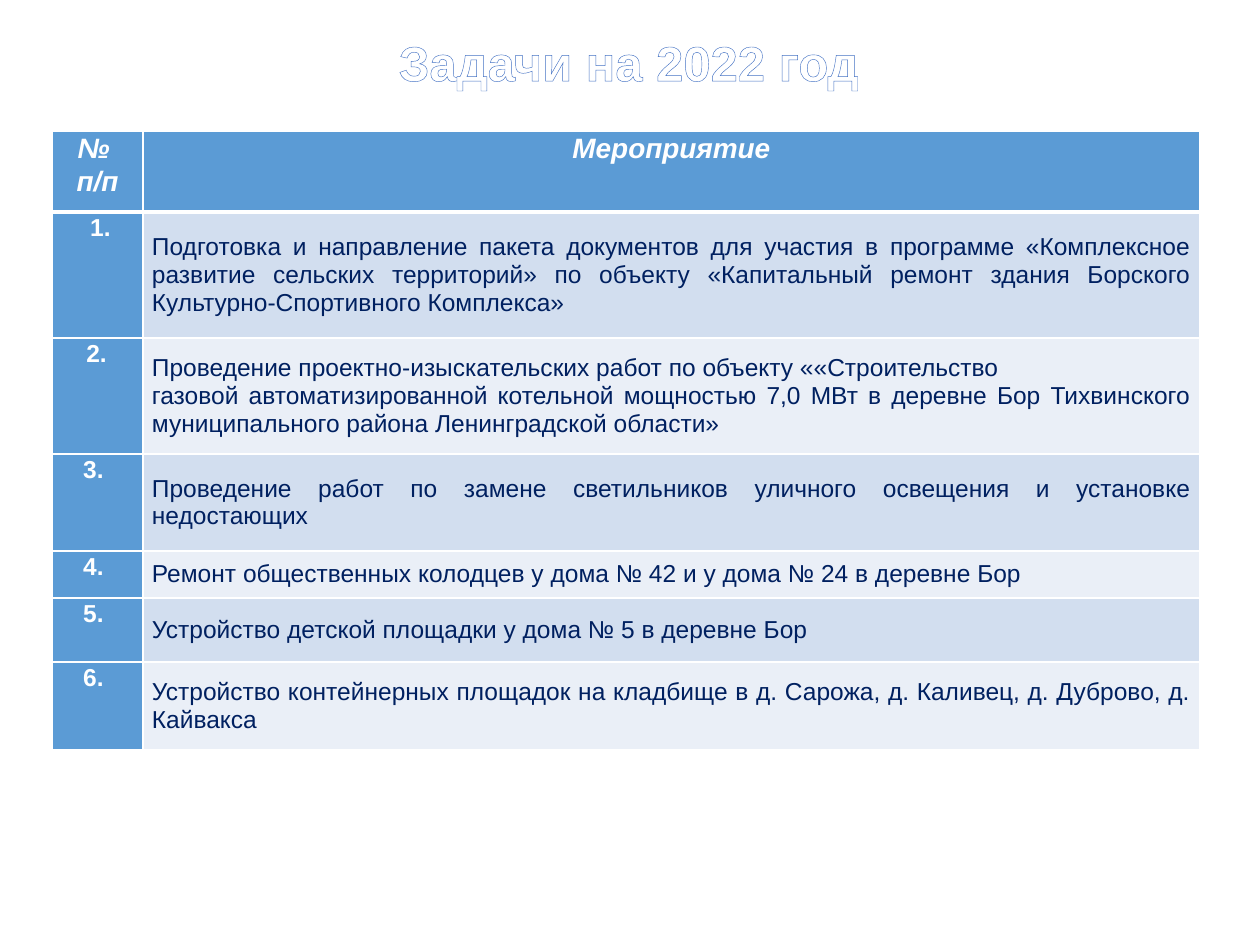
from dataclasses import dataclass

from lxml.etree import SubElement
from pptx import Presentation
from pptx.dml.color import RGBColor
from pptx.enum.text import MSO_ANCHOR as Anchor, PP_ALIGN as Align
from pptx.oxml.ns import qn
from pptx.util import Emu, Pt

PX_PER_INCH = 126
FONT = "Arial"
WHITE = RGBColor(0xFF, 0xFF, 0xFF)
NAVY = RGBColor(0x00, 0x20, 0x60)
BLUE = RGBColor(0x5B, 0x9B, 0xD5)
OUTLINE = RGBColor(0x44, 0x72, 0xC4)
BANDS = (RGBColor(0xD2, 0xDE, 0xEF), RGBColor(0xEA, 0xEF, 0xF7))
COLUMN_WIDTHS = (91, 1057)
HEADER_HEIGHT = 81
CELL_MARGIN = 9


@dataclass(frozen=True)
class Task:
    text: str
    height: int
    number_shift: int = -4


@dataclass(frozen=True)
class CellStyle:
    fill: RGBColor
    color: RGBColor
    size: int
    bold: bool
    italic: bool
    align: Align
    anchor: Anchor
    line_spacing: float


HEADER = CellStyle(BLUE, WHITE, 16, True, True, Align.CENTER, Anchor.TOP, 1.07)
NUMBER = CellStyle(BLUE, WHITE, 14, True, False, Align.CENTER, Anchor.TOP, 1.07)
BODIES = tuple(
    CellStyle(band, NAVY, 14, False, False, Align.JUSTIFY, Anchor.MIDDLE, 1.0)
    for band in BANDS
)

TASKS = (
    Task(
        "Подготовка и направление пакета документов для участия в программе "
        "«Комплексное развитие сельских территорий» по объекту «Капитальный "
        "ремонт здания Борского Культурно-Спортивного Комплекса»",
        126, 3,
    ),
    Task(
        "Проведение проектно-изыскательских работ по объекту ««Строительство\n"
        "газовой автоматизированной котельной мощностью 7,0 МВт в деревне Бор "
        "Тихвинского муниципального района Ленинградской области»",
        116, -1,
    ),
    Task(
        "Проведение работ по замене светильников уличного освещения "
        "и установке недостающих",
        97,
    ),
    Task("Ремонт общественных колодцев у дома № 42 и у дома № 24 в деревне Бор", 47),
    Task("Устройство детской площадки у дома № 5 в деревне Бор", 64),
    Task(
        "Устройство контейнерных площадок на кладбище в д. Сарожа, "
        "д. Каливец, д. Дуброво, д. Кайвакса",
        88,
    ),
)


def px(length: int) -> Emu:
    """Convert pixels to EMU."""
    return Emu(round(length * 914400 / PX_PER_INCH))


def add_line(parent, tag: str, width: float, color: RGBColor, index: int) -> None:
    """Insert a solid line element into its parent."""
    line = SubElement(parent, qn(tag), w=str(int(Pt(width))))
    fill = SubElement(line, qn("a:solidFill"))
    SubElement(fill, qn("a:srgbClr"), val=str(color))
    parent.insert(index, line)


def add_title(slide, text: str) -> None:
    """Add the outlined white heading."""
    frame = slide.shapes.add_textbox(px(96), px(26), px(1080), px(72)).text_frame
    frame.word_wrap = True
    frame.margin_right = px(27)
    frame.text = text
    paragraph = frame.paragraphs[0]
    paragraph.alignment = Align.CENTER
    run = paragraph.runs[0]
    run.font.name, run.font.size, run.font.bold = FONT, Pt(28), True
    run.font.color.rgb = WHITE
    add_line(run.font._element, "a:ln", 0.8, OUTLINE, 0)


def fill_cell(table, row: int, column: int, text: str, style: CellStyle,
              shift: int = 0) -> None:
    """Write and format one table cell."""
    cell = table.cell(row, column)
    cell.text_frame.text = text
    cell.vertical_anchor = style.anchor
    cell.margin_top = cell.margin_bottom = 0
    cell.margin_left = px(CELL_MARGIN + shift)
    cell.margin_right = px(CELL_MARGIN - shift)
    cell.fill.solid()
    cell.fill.fore_color.rgb = style.fill
    for paragraph in cell.text_frame.paragraphs:
        paragraph.alignment = style.align
        paragraph.line_spacing = style.line_spacing
        for run in paragraph.runs:
            font = run.font
            font.name, font.size = FONT, Pt(style.size)
            font.bold, font.italic = style.bold, style.italic
            font.color.rgb = style.color
    widths = {"L": 1, "R": 1, "T": 3 if row == 1 else 1, "B": 3 if row == 0 else 1}
    properties = cell._tc.get_or_add_tcPr()
    for index, (side, width) in enumerate(widths.items()):
        add_line(properties, f"a:ln{side}", width, WHITE, index)


def add_task_table(slide) -> None:
    """Add the numbered table of tasks."""
    heights = (HEADER_HEIGHT, *(task.height for task in TASKS))
    table = slide.shapes.add_table(
        len(heights), len(COLUMN_WIDTHS), px(52), px(131),
        px(sum(COLUMN_WIDTHS)), px(sum(heights)),
    ).table
    for column, width in zip(table.columns, COLUMN_WIDTHS):
        column.width = px(width)
    for row, height in zip(table.rows, heights):
        row.height = px(height)
    for column, heading in enumerate(("№ \nп/п", "Мероприятие")):
        fill_cell(table, 0, column, heading, HEADER)
    for number, task in enumerate(TASKS, start=1):
        fill_cell(table, number, 0, f"{number}.", NUMBER, task.number_shift)
        fill_cell(table, number, 1, task.text, BODIES[(number - 1) % len(BODIES)])


def main() -> None:
    """Build and save the slide."""
    presentation = Presentation()
    presentation.slide_width, presentation.slide_height = px(1260), px(945)
    slide = presentation.slides.add_slide(presentation.slide_layouts[6])
    add_title(slide, "Задачи на 2022 год")
    add_task_table(slide)
    presentation.save("out.pptx")


if __name__ == "__main__":
    main()
